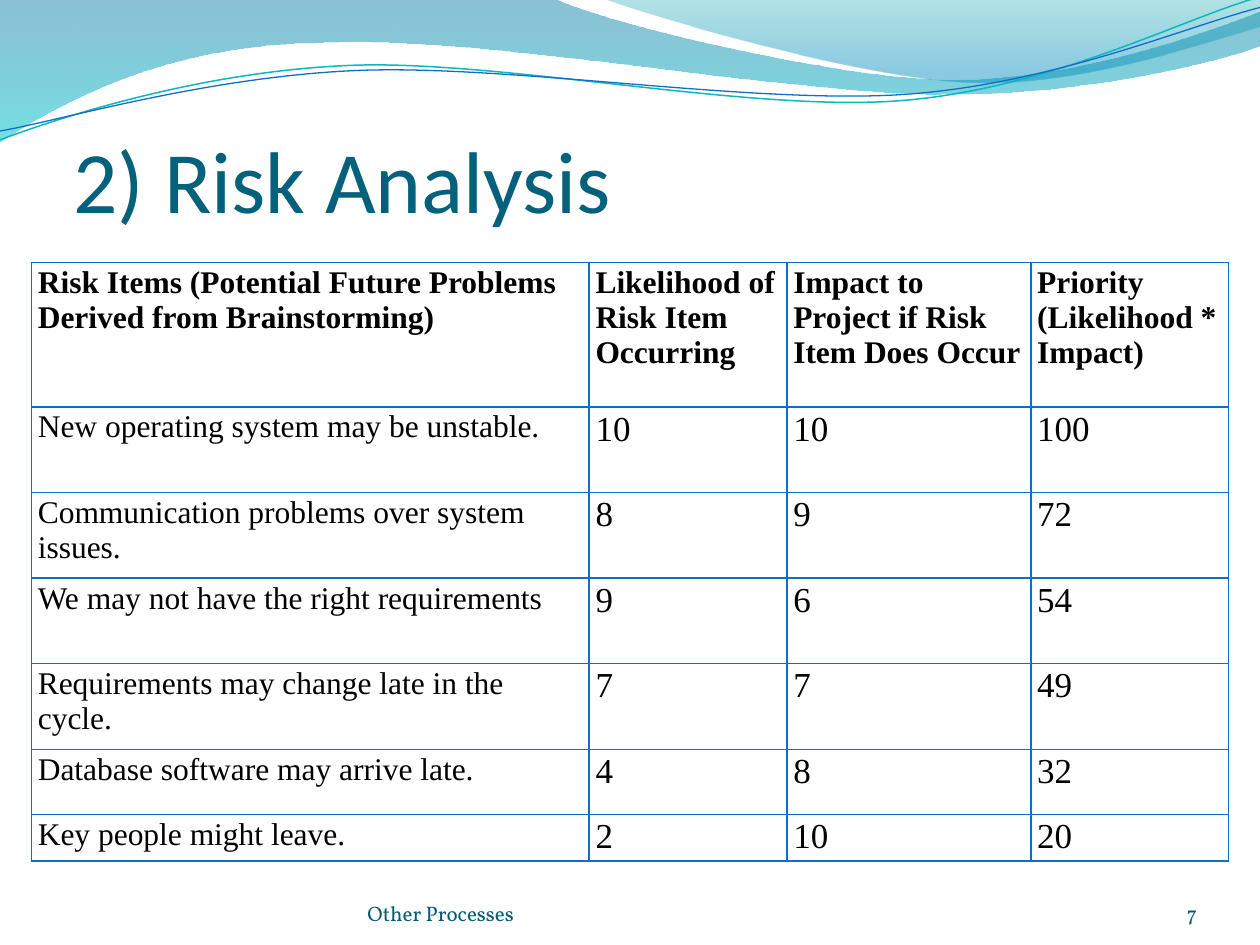
import math

from lxml import etree
from pptx import Presentation
from pptx.dml.color import RGBColor
from pptx.enum import text
from pptx.oxml import ns
from pptx.util import Pt

COLORS = {
    "title": "04617B", "footer": "045D75", "text": "000000", "border": "0F6FC6",
    "teal line": "0AB8BF", "blue line": "0F6FC6",
    "band top": "0074A1", "band bottom": "00C6CF",
    "corner top": "00A1A9", "corner bottom": "008BBF",
}
TILT = 2.7


def draw_wave(slide, start, segments, closed):
    """Draw a path; a segment holds one line end or three Bezier points."""
    points = [(Pt(x), Pt(y)) for segment in segments for x, y in segment]
    builder = slide.shapes.build_freeform(Pt(start[0]), Pt(start[1]))
    builder.add_line_segments(points, close=closed)
    shape = builder.convert_to_shape()
    shape.shadow.inherit = False
    lines = iter(list(shape._element.iter(ns.qn("a:lnTo"))))
    for segment in segments:
        first = next(lines)
        if len(segment) == 3:
            first.tag = ns.qn("a:cubicBezTo")
            for line in (next(lines), next(lines)):
                first.append(line[0])
                line.getparent().remove(line)
    return shape


def add_run(paragraph, words, size, font, color, bold=False):
    run = paragraph.add_run()
    run.text = words
    run.font.size = Pt(size)
    run.font.name = font
    run.font.bold = bold
    run.font.color.rgb = RGBColor.from_string(COLORS[color])


presentation = Presentation()
presentation.slide_width, presentation.slide_height = Pt(720), Pt(540)
slide = presentation.slides.add_slide(presentation.slide_layouts[5])

# Filled waves: start, segments, gradient stops (color, position, opacity)
filled_waves = [
    ((0, -0.7),
     [[(316.8, -0.7)],
      [(342.7, 12.2), (478.1, 45.4), (545.8, 45.4)],
      [(614.2, 45.4), (689.8, 18.7), (720, 6.5)],
      [(720.7, 25.9)],
      [(707.8, 31.7), (626.4, 54.7), (537.1, 54)],
      [(447.8, 54), (275, 20.2), (185, 24.5)],
      [(92.9, 25.2), (33.1, 59.8), (-0.7, 81.4)],
      [(0, -0.7)]],
     [("band top", 0, 45), ("band bottom", 1, 55)]),
    ((344.9, -0.7),
     [[(366.5, 7.9), (491, 44.6), (553.7, 46.8)],
      [(616.3, 49.7), (691.9, 23), (720, 15.1)],
      [(720, 0)],
      [(344.9, -0.7)]],
     [("corner top", 0, 30), ("corner bottom", 0.8, 45)]),
]
for start, segments, stops in filled_waves:
    shape = draw_wave(slide, start, segments, True)
    shape.line.fill.background()
    shape.fill.gradient()
    shape.fill.gradient_angle = 270
    for stop, (color, position, opacity) in zip(shape.fill.gradient_stops, stops):
        stop.position = position
        stop.color.rgb = RGBColor.from_string(COLORS[color])
    colors = list(shape.fill._xPr.iter(ns.qn("a:srgbClr")))
    for element, (color, position, opacity) in zip(colors, stops):
        etree.SubElement(element, ns.qn("a:alpha"), val=str(opacity * 1000))

# Wave lines, laid out level around their centre and then tilted
wave_lines = [
    ((359.3, 41.4), (0, 79.9),
     [[(34.6, 67), (113.8, 41), (199.4, 37.4)],
      [(284.4, 33.8), (427, 64.1), (513.4, 57.6)],
      [(599.8, 51.1), (675.4, 10.8), (718.6, -1.4)]],
     "teal line", 0.85),
    ((359.6, 42.5), (0, 74.9),
     [[(33.8, 69.1), (118.1, 43.9), (203.8, 40.3)],
      [(290.2, 36.7), (429.8, 59.8), (516.2, 54)],
      [(601.9, 48.2), (677.5, 15.1), (720, 4.3)]],
     "blue line", 0.75),
]
cosine, sine = math.cos(math.radians(TILT)), math.sin(math.radians(TILT))
for (center_x, center_y), start, segments, color, width in wave_lines:
    (start,), *segments = [
        [(center_x + (x - center_x) * cosine - (y - center_y) * sine,
          center_y + (x - center_x) * sine + (y - center_y) * cosine) for x, y in segment]
        for segment in [[start], *segments]]
    shape = draw_wave(slide, start, segments, False)
    shape.rotation = -TILT
    shape.fill.background()
    shape.line.color.rgb = RGBColor.from_string(COLORS[color])
    shape.line.width = Pt(width)

# Title, footer and slide number
title = slide.shapes.title
title.left, title.top, title.width, title.height = Pt(42), Pt(42), Pt(648), Pt(90)
footer = slide.shapes.add_textbox(Pt(210), Pt(500.5), Pt(264), Pt(28.75))
number = slide.shapes.add_textbox(Pt(624), Pt(500.5), Pt(60), Pt(28.75))
LEFT, RIGHT = text.PP_ALIGN.LEFT, text.PP_ALIGN.RIGHT
for shape, words, size, font, color, align, top in [
    (title, "2) Risk Analysis", 50, "Calibri", "title", LEFT, 3.6),
    (footer, "Other Processes", 12, "Vollkorn", "footer", LEFT, 0),
    (number, "7", 12, "Vollkorn", "footer", RIGHT, 0),
]:
    frame = shape.text_frame
    frame.word_wrap = True
    frame.auto_size = text.MSO_AUTO_SIZE.NONE
    frame.vertical_anchor = text.MSO_ANCHOR.BOTTOM
    frame.margin_left = frame.margin_right = frame.margin_bottom = 0
    frame.margin_top = Pt(top)
    frame.paragraphs[0].alignment = align
    add_run(frame.paragraphs[0], words, size, font, color)

# Risk table
rows = [
    ("Risk Items (Potential Future Problems Derived from Brainstorming)",
     "Likelihood of Risk Item Occurring",
     "Impact to Project if Risk Item Does Occur",
     "Priority (Likelihood * Impact)"),
    ("New operating system may be unstable.", "10", "10", "100"),
    ("Communication problems over system issues.", "8", "9", "72"),
    ("We may not have the right requirements", "9", "6", "54"),
    ("Requirements may change late in the cycle.", "7", "7", "49"),
    ("Database software may arrive late.", "4", "8", "32"),
    ("Key people might leave.", "2", "10", "20"),
]
column_widths = [318.7, 113, 139.4, 112.9]
row_heights = [82.6, 48.9, 48.9, 48.9, 48.9, 37.4, 26.4]
table = slide.shapes.add_table(len(rows), len(column_widths), Pt(18), Pt(150),
                               Pt(sum(column_widths)), Pt(sum(row_heights))).table
table.first_row = table.horz_banding = False
for column, width in zip(table.columns, column_widths):
    column.width = Pt(width)
for row, height in zip(table.rows, row_heights):
    row.height = Pt(height)

for row_index, row in enumerate(rows):
    for column_index, words in enumerate(row):
        cell = table.cell(row_index, column_index)
        cell.margin_left = cell.margin_right = Pt(3.6)
        cell.margin_top = cell.margin_bottom = Pt(1.6)
        header = row_index == 0
        size = 18 if header or column_index == 0 else 20
        add_run(cell.text_frame.paragraphs[0], words, size, "Times New Roman", "text", header)
        properties = cell._tc.get_or_add_tcPr()
        for side in ("a:lnL", "a:lnR", "a:lnT", "a:lnB"):
            border = etree.SubElement(properties, ns.qn(side), w=str(Pt(1)))
            fill = etree.SubElement(border, ns.qn("a:solidFill"))
            etree.SubElement(fill, ns.qn("a:srgbClr"), val=COLORS["border"])
        cell.fill.background()

presentation.save("out.pptx")
